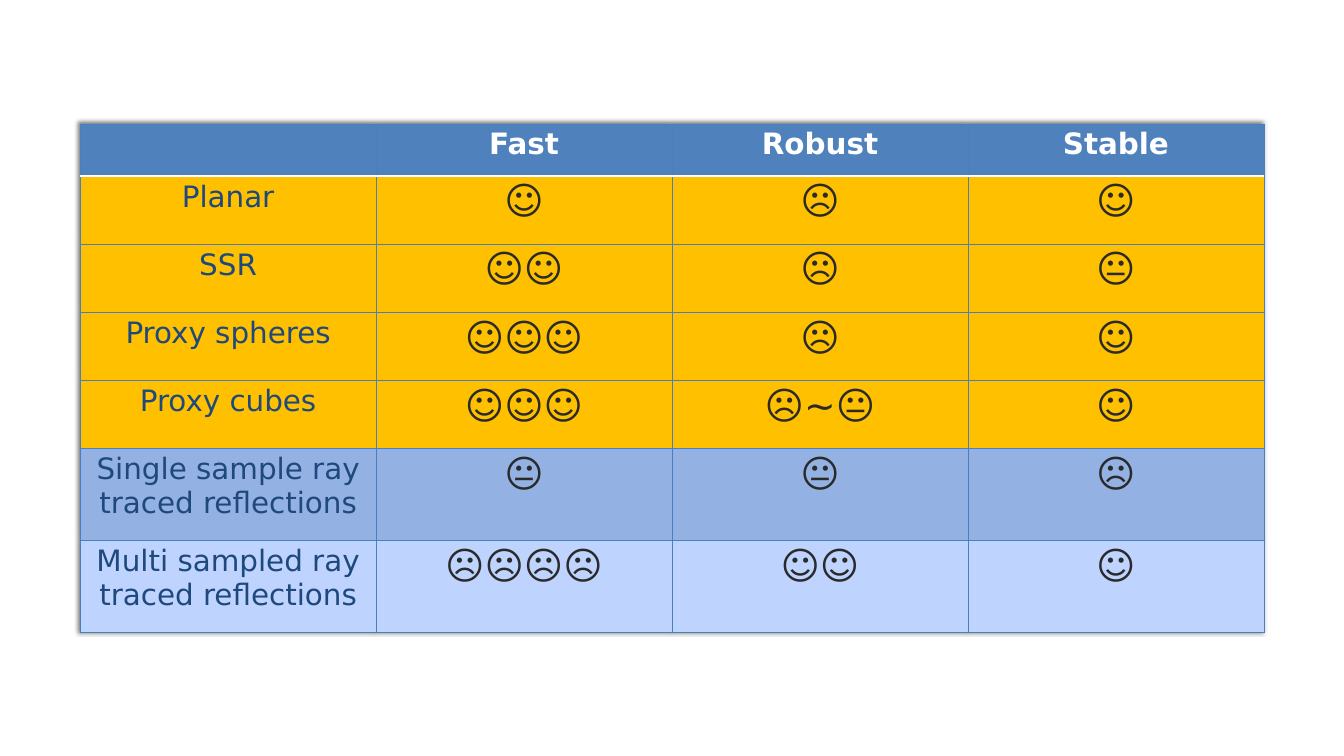
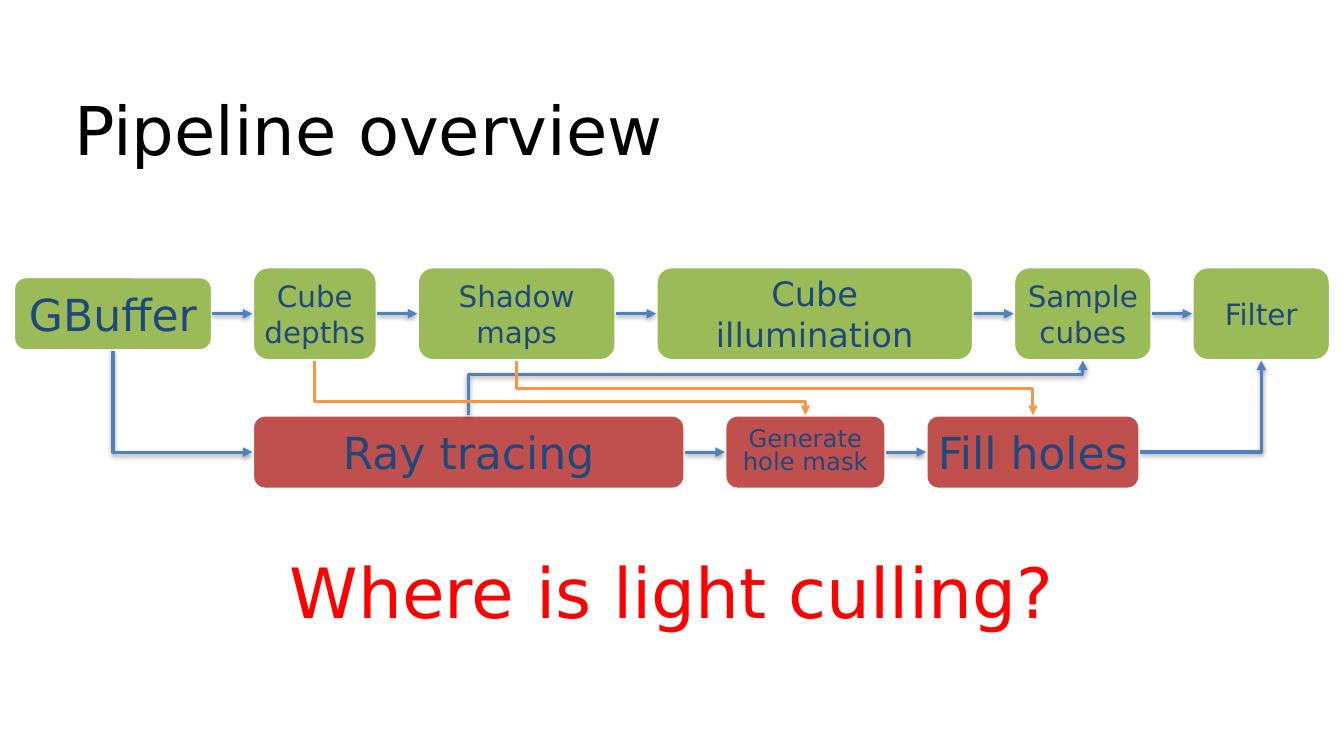
from dataclasses import dataclass
from pptx import Presentation
from pptx.dml.color import RGBColor
from pptx.enum.shapes import MSO_CONNECTOR, MSO_SHAPE
from pptx.enum.text import MSO_ANCHOR, PP_ALIGN
from pptx.oxml import parse_xml
from pptx.oxml.ns import nsdecls, qn
from pptx.util import Inches, Pt

STRAIGHT, ELBOW = MSO_CONNECTOR.STRAIGHT, MSO_CONNECTOR.ELBOW
PROCESS = MSO_SHAPE.FLOWCHART_ALTERNATE_PROCESS
MIDDLE, TOP = MSO_ANCHOR.MIDDLE, MSO_ANCHOR.TOP
LEFT, CENTER = PP_ALIGN.LEFT, PP_ALIGN.CENTER
TOP_SIDE, LEFT_SIDE, BOTTOM_SIDE, RIGHT_SIDE = range(4)


@dataclass(frozen=True)
class Theme:
    font: str = "DejaVu Sans"
    white: str = "FFFFFF"
    black: str = "000000"
    ink: str = "1F497D"
    face: str = "2A2A2A"
    blue: str = "4F81BD"
    grid: str = "4B7EBC"
    amber: str = "FFC000"
    mid_blue: str = "93B2E3"
    pale_blue: str = "BFD3FF"
    green: str = "9BBB59"
    red: str = "C0504D"
    orange: str = "F79646"
    alert: str = "FF0000"
    title_size: float = 64
    question_size: float = 66
    face_size: float = 36
    label_size: float = 28
    wide_size: float = 32
    large_size: float = 42
    small_size: float = 23.1
    line_width: float = 3


theme = Theme()


def write(frame, text, size, color, align=CENTER, anchor=MIDDLE, bold=False):
    frame.word_wrap = True
    frame.vertical_anchor = anchor
    frame.margin_left = frame.margin_right = Inches(0.09)
    frame.margin_top = frame.margin_bottom = Inches(0.09)
    paragraph = frame.paragraphs[0]
    paragraph.text = text
    paragraph.alignment = align
    paragraph.font.name = theme.font
    paragraph.font.size = Pt(size)
    paragraph.font.bold = bold
    paragraph.font.color.rgb = RGBColor.from_string(color)
    return paragraph


def style_arrow(arrow, color, shadowed):
    arrow.line.color.rgb = RGBColor.from_string(color)
    arrow.line.width = Pt(theme.line_width)
    properties = arrow._element.spPr
    properties.find(qn("a:ln")).append(parse_xml(f'<a:tailEnd {nsdecls("a")} type="triangle"/>'))
    shadow = (
        '<a:outerShdw blurRad="63500" dist="25400" dir="5400000" rotWithShape="0">'
        f'<a:srgbClr val="{theme.black}"><a:alpha val="38000"/></a:srgbClr></a:outerShdw>'
    )
    properties.append(parse_xml(f'<a:effectLst {nsdecls("a")}>{shadow if shadowed else ""}</a:effectLst>'))


deck = Presentation()
deck.slide_width, deck.slide_height = Inches(17.78), Inches(10)
blank = deck.slide_layouts[6]

comparison = deck.slides.add_slide(blank)
ratings = [
    (0.69, theme.blue, ["", "Fast", "Robust", "Stable"]),
    (0.9, theme.amber, ["Planar", "☺", "☹", "☺"]),
    (0.9, theme.amber, ["SSR", "☺☺", "☹", "😐"]),
    (0.9, theme.amber, ["Proxy spheres", "☺☺☺", "☹", "☺"]),
    (0.9, theme.amber, ["Proxy cubes", "☺☺☺", "☹~😐", "☺"]),
    (1.22, theme.mid_blue, ["Single sample ray traced reflections", "😐", "😐", "☹"]),
    (1.22, theme.pale_blue, ["Multi sampled ray traced reflections", "☹☹☹☹", "☺☺", "☺"]),
]
table = comparison.shapes.add_table(
    len(ratings), 4, Inches(1.06), Inches(1.64), Inches(15.66), Inches(6.72)
).table
table.horz_banding = False
table._tbl.tblPr.insert(0, parse_xml(
    f'<a:effectLst {nsdecls("a")}><a:outerShdw blurRad="50800" dist="25400" dir="13500000">'
    f'<a:srgbClr val="{theme.black}"><a:alpha val="50000"/></a:srgbClr></a:outerShdw></a:effectLst>'
))
for column in table.columns:
    column.width = Inches(3.915)

for row, (height, fill, entries) in enumerate(ratings):
    table.rows[row].height = Inches(height)
    for col, entry in enumerate(entries):
        cell = table.cell(row, col)
        for side in "LRTB":
            under_header = (row, side) in ((0, "B"), (1, "T"))
            color, width = (theme.white, 2) if under_header else (theme.grid, 0.75)
            cell._tc.get_or_add_tcPr().append(parse_xml(
                f'<a:ln{side} {nsdecls("a")} w="{Pt(width)}"><a:solidFill>'
                f'<a:srgbClr val="{color}"/></a:solidFill></a:ln{side}>'
            ))
        cell.fill.solid()
        cell.fill.fore_color.rgb = RGBColor.from_string(fill)
        if row == 0:
            size, color = theme.label_size, theme.white
        elif col == 0:
            size, color = theme.label_size, theme.ink
        else:
            size, color = theme.face_size, theme.face
        write(cell.text_frame, entry, size, color, anchor=TOP, bold=row == 0)
        cell.vertical_anchor = TOP
        cell.margin_left = cell.margin_right = Inches(0.1)
        cell.margin_top = cell.margin_bottom = Inches(0.05)

pipeline = deck.slides.add_slide(blank)
for text, top, height, size, color, align in [
    ("Pipeline overview", 1.07, 1.26, theme.title_size, theme.black, LEFT),
    ("Where is light culling?", 6.89, 1.86, theme.question_size, theme.alert, CENTER),
]:
    box = pipeline.shapes.add_textbox(Inches(0.89), Inches(top), Inches(16), Inches(height))
    write(box.text_frame, text, size, color, align)

gap = 0.53
stage_rows = [
    (0.18, 4.15, theme.green, [
        ("GBuffer", 2.63, 0.98, theme.large_size),
        ("Cube depths", 1.65, 1.24, theme.label_size),
        ("Shadow maps", 2.63, 1.24, theme.label_size),
        ("Cube illumination", 4.2, 1.24, theme.wide_size),
        ("Sample cubes", 1.83, 1.24, theme.label_size),
        ("Filter", 1.83, 1.24, theme.label_size),
    ]),
    (3.34, 5.98, theme.red, [
        ("Ray tracing", 5.72, 0.98, theme.large_size),
        ("Generate hole mask", 2.13, 0.98, theme.small_size),
        ("Fill holes", 2.83, 0.98, theme.large_size),
    ]),
]
stages = {}
for left, middle, fill, row_stages in stage_rows:
    previous = None
    for name, width, height, size in row_stages:
        stage = pipeline.shapes.add_shape(
            PROCESS, Inches(left), Inches(middle - height / 2), Inches(width), Inches(height)
        )
        stage.shadow.inherit = False
        stage.fill.solid()
        stage.fill.fore_color.rgb = RGBColor.from_string(fill)
        stage.line.color.rgb = RGBColor.from_string(theme.white)
        stage.line.width = Pt(theme.line_width)
        label = write(stage.text_frame, name, size, theme.ink)
        if size == theme.small_size:
            label.line_spacing = 0.8
        if previous:
            arrow = pipeline.shapes.add_connector(STRAIGHT, 0, 0, 0, 0)
            arrow.begin_connect(previous, RIGHT_SIDE)
            arrow.end_connect(stage, LEFT_SIDE)
            style_arrow(arrow, theme.blue, True)
        stages[name] = previous = stage
        left += width + gap

routes = [
    ("GBuffer", BOTTOM_SIDE, "Ray tracing", LEFT_SIDE, 270, "H", None, theme.blue),
    ("Ray tracing", TOP_SIDE, "Sample cubes", BOTTOM_SIDE, 90, "HV", 75100, theme.blue),
    ("Cube depths", BOTTOM_SIDE, "Generate hole mask", TOP_SIDE, 270, "H", 75100, theme.orange),
    ("Shadow maps", BOTTOM_SIDE, "Fill holes", TOP_SIDE, 270, "H", 51900, theme.orange),
    ("Fill holes", RIGHT_SIDE, "Filter", BOTTOM_SIDE, 0, "V", None, theme.blue),
]
for source, source_side, target, target_side, turn, flips, bend, color in routes:
    ends = []
    for name, side in ((source, source_side), (target, target_side)):
        stage = stages[name]
        across, down = [(0.5, 0), (0, 0.5), (0.5, 1), (1, 0.5)][side]
        ends.append((stage.left + stage.width * across, stage.top + stage.height * down))
    (x1, y1), (x2, y2) = ends
    width, height = abs(x2 - x1), abs(y2 - y1)
    if turn:
        width, height = height, width
    arrow = pipeline.shapes.add_connector(ELBOW, 0, 0, 0, 0)
    arrow.left, arrow.top = int((x1 + x2 - width) / 2), int((y1 + y2 - height) / 2)
    arrow.width, arrow.height = int(width), int(height)
    frame = arrow._element.spPr.find(qn("a:xfrm"))
    frame.set("rot", str(turn * 60000))
    for flip in flips:
        frame.set(f"flip{flip}", "1")
    geometry = arrow._element.spPr.find(qn("a:prstGeom"))
    if bend is None:
        geometry.set("prst", "bentConnector2")
    else:
        geometry.find(qn("a:avLst")).append(
            parse_xml(f'<a:gd {nsdecls("a")} name="adj1" fmla="val {bend}"/>')
        )
    style_arrow(arrow, color, color == theme.blue)

deck.save("out.pptx")
